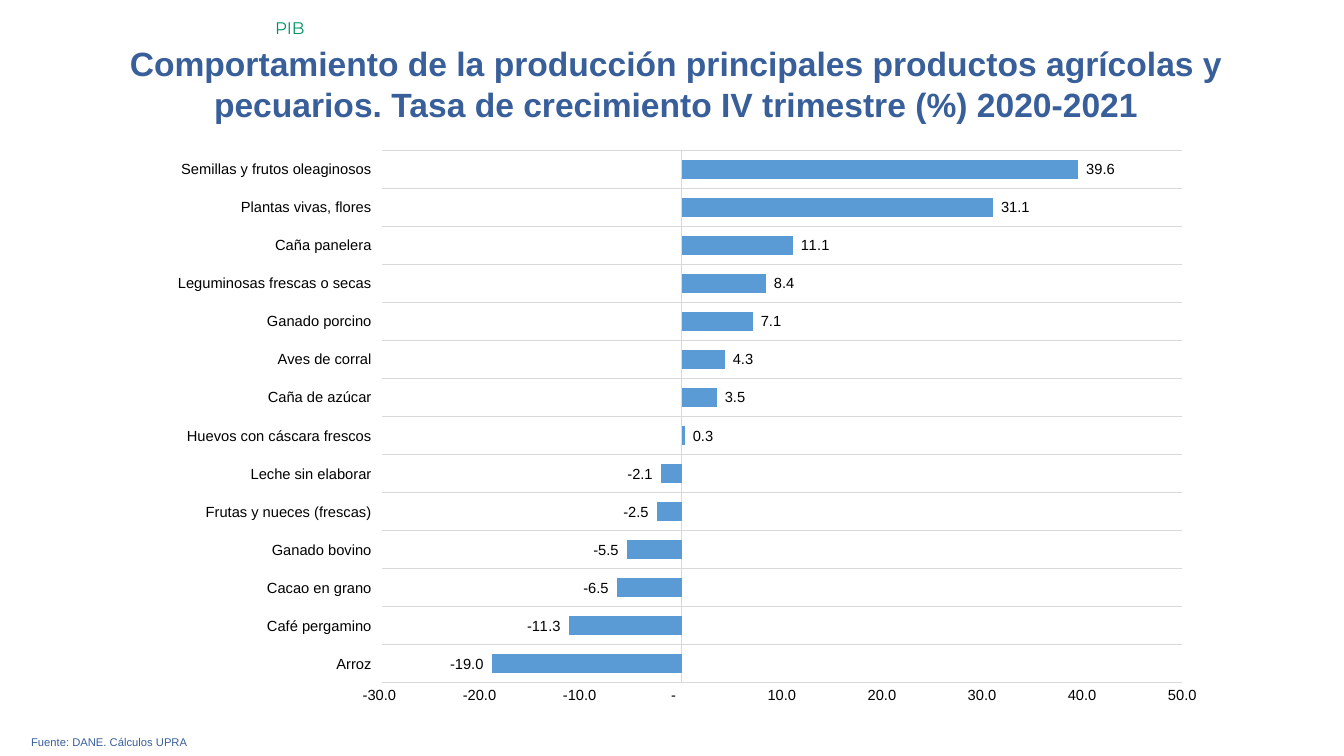
from lxml import etree
from pptx import Presentation
from pptx.chart.data import CategoryChartData
from pptx.dml.color import RGBColor
from pptx.enum.chart import XL_CHART_TYPE, XL_LABEL_POSITION, XL_TICK_LABEL_POSITION, XL_TICK_MARK
from pptx.enum.text import PP_ALIGN
from pptx.oxml import parse_xml
from pptx.oxml.ns import nsdecls, qn
from pptx.util import Inches, Pt

BAR_CLUSTERED = XL_CHART_TYPE.BAR_CLUSTERED
OUTSIDE_END = XL_LABEL_POSITION.OUTSIDE_END
LABELS_LOW = XL_TICK_LABEL_POSITION.LOW
NO_TICK = XL_TICK_MARK.NONE
LEFT, CENTER, JUSTIFY = PP_ALIGN.LEFT, PP_ALIGN.CENTER, PP_ALIGN.JUSTIFY

BLUE, GREEN, BAR_BLUE, GRAY, BLACK = "395F9B", "009267", "5B9BD5", "D9D9D9", "000000"
NUMBER_FORMAT = '_-* #,##0.0_-;\\-* #,##0.0_-;_-* "-"??_-;'
GROWTH_RATES = {
    "Arroz": -19.0,
    "Café pergamino": -11.3,
    "Cacao en grano": -6.5,
    "Ganado bovino": -5.5,
    "Frutas y nueces (frescas)": -2.5,
    "Leche sin elaborar": -2.1,
    "Huevos con cáscara frescos": 0.3,
    "Caña de azúcar": 3.5,
    "Aves de corral": 4.3,
    "Ganado porcino": 7.1,
    "Leguminosas frescas o secas": 8.4,
    "Caña panelera": 11.1,
    "Plantas vivas, flores": 31.1,
    "Semillas y frutos oleaginosos": 39.6,
}


def color(code):
    """Turn a hex string into a colour."""
    return RGBColor.from_string(code)


class SlideBuilder:
    """Hold the style and the current slide."""

    def __init__(self, page, font="Arial", chart_size=10.5):
        """Keep the slide and its default fonts."""
        self.page = page
        self.font = font
        self.chart_size = chart_size

    def style(self, font, size, code, name=None, bold=False):
        """Set the face, size and colour of a font."""
        font.name = name or self.font
        font.size = Pt(size)
        font.bold = bold
        font.color.rgb = color(code)

    def text(self, place, words, size, code, align=LEFT, name=None, bold=False):
        """Add a text box with one paragraph."""
        box = self.page.shapes.add_textbox(*map(Inches, place))
        box.text_frame.word_wrap = True
        para = box.text_frame.paragraphs[0]
        para.alignment = align
        span = para.add_run()
        span.text = words
        self.style(span.font, size, code, name, bold)

    def bar_chart(self, place, rates, limits, step, plot_area):
        """Add a horizontal bar chart with labelled bars."""
        data = CategoryChartData(number_format="0.0")
        data.categories = list(rates)
        data.add_series("Series 1", list(rates.values()))
        frame = self.page.shapes.add_chart(BAR_CLUSTERED, *map(Inches, place), data)
        chart = frame.chart
        chart.has_legend = False
        chart.has_title = False
        self.style(chart.font, self.chart_size, BLACK)

        plot = chart.plots[0]
        plot.gap_width = 100
        plot.vary_by_categories = False
        series = plot.series[0]
        series.invert_if_negative = False
        series.format.fill.solid()
        series.format.fill.fore_color.rgb = color(BAR_BLUE)
        labels = series.data_labels
        labels.show_value = True
        labels.position = OUTSIDE_END
        self.number_format(labels)
        self.style(labels.font, self.chart_size, BLACK)

        products, percent = chart.category_axis, chart.value_axis
        for axis in (products, percent):
            axis.major_tick_mark = axis.minor_tick_mark = NO_TICK
            self.style(axis.tick_labels.font, self.chart_size, BLACK)
        products.tick_label_position = LABELS_LOW
        products.has_major_gridlines = True
        for line in (products.format.line, products.major_gridlines.format.line):
            line.color.rgb = color(GRAY)
            line.width = Pt(0.75)
        percent.has_major_gridlines = False
        percent.format.line.fill.background()
        percent.minimum_scale, percent.maximum_scale = limits
        percent.major_unit = step
        self.number_format(percent.tick_labels)
        self.place_plot(chart, plot_area)

    def number_format(self, labels):
        """Apply the number format of the chart to its labels."""
        labels.number_format = NUMBER_FORMAT
        labels.number_format_is_linked = False

    def place_plot(self, chart, plot_area):
        """Fix the inner plot area as fractions of the chart."""
        area = chart.plots[0]._element.getparent()
        for old in area.findall(qn("c:layout")):
            area.remove(old)
        layout = parse_xml(f"<c:layout {nsdecls('c')}><c:manualLayout/></c:layout>")
        settings = [("layoutTarget", "inner"), ("xMode", "edge"), ("yMode", "edge")]
        settings += zip("xywh", plot_area)
        for tag, value in settings:
            etree.SubElement(layout[0], qn(f"c:{tag}")).set("val", str(value))
        area.insert(0, layout)


def main():
    """Build the slide and save it."""
    deck = Presentation()
    deck.slide_width, deck.slide_height = Inches(13.33), Inches(7.5)
    slide = SlideBuilder(deck.slides.add_slide(deck.slide_layouts[6]))
    slide.text(
        (0.45, 0.38, 12.51, 0.91),
        "Comportamiento de la producción principales productos agrícolas y pecuarios. "
        "Tasa de crecimiento IV trimestre (%) 2020-2021",
        24, BLUE, CENTER, bold=True,
    )
    slide.text((0.21, 7.25, 12.91, 0.24), "Fuente: DANE. Cálculos UPRA", 8, BLUE, JUSTIFY)
    slide.text((2.63, 0.13, 10.7, 0.3), "PIB", 12, GREEN, name="Montserrat")
    slide.bar_chart(
        (1.56, 1.38, 10.59, 5.68), GROWTH_RATES,
        limits=(-30, 50), step=10, plot_area=(0.21, 0.02, 0.75, 0.93),
    )
    deck.save("out.pptx")


if __name__ == "__main__":
    main()
